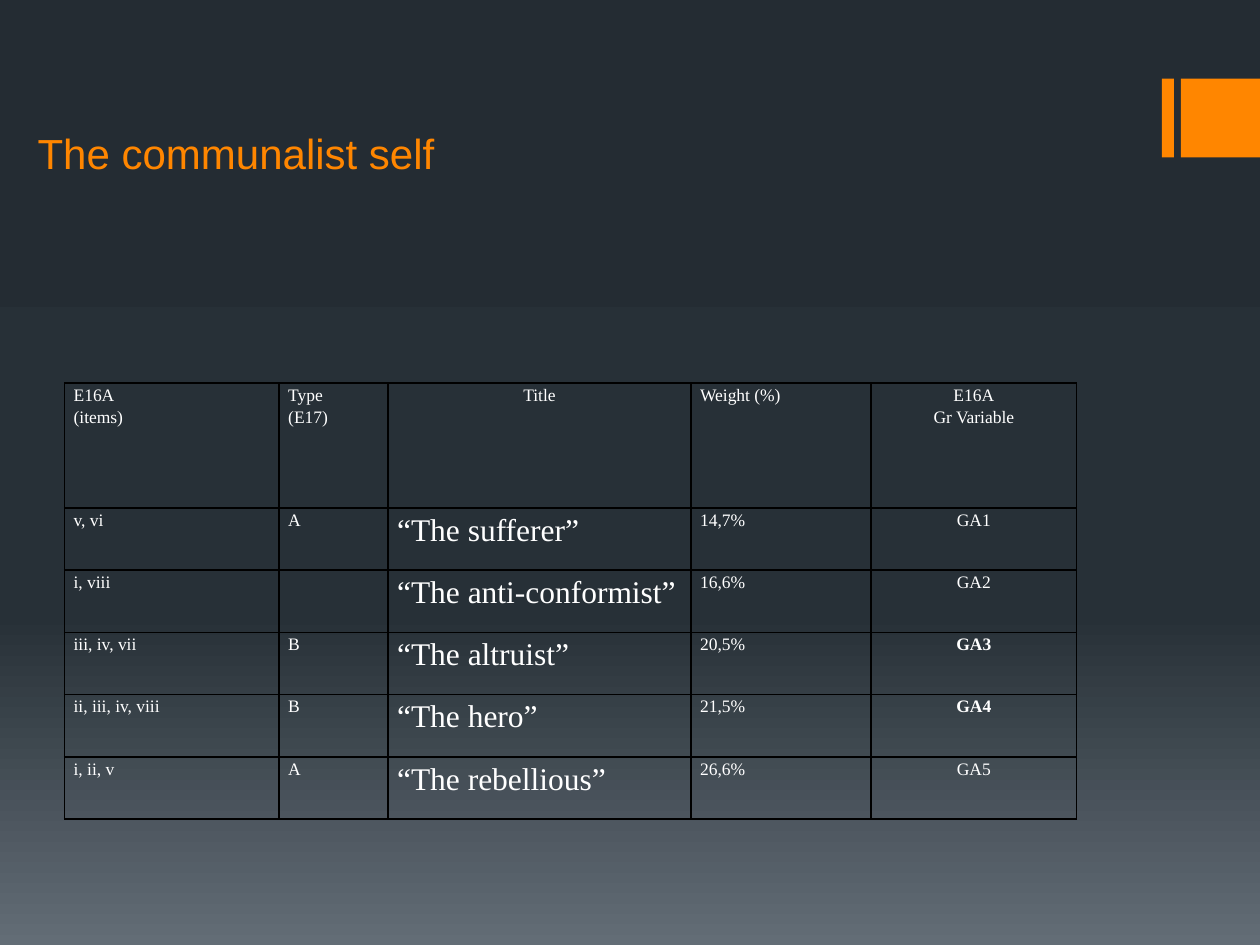
from copy import deepcopy
from typing import NamedTuple

from lxml import etree
from pptx import Presentation
from pptx.dml.color import RGBColor
from pptx.enum import shapes, text
from pptx.oxml import ns
from pptx.util import Pt

ORANGE, WHITE, BLACK = "FF8600", "FFFFFF", "000000"
BACKGROUND = [(0, "242C33"), (0.65, "273037"), (1, "636D76")]
ROW_HEIGHTS = [71.4] + [35.6] * 5
BOLD_VARIABLES = {"GA3", "GA4"}


class Column(NamedTuple):
    width: float
    header_align: text.PP_ALIGN
    body_align: text.PP_ALIGN
    body_size: float = 10


JUSTIFY, CENTER = text.PP_ALIGN.JUSTIFY, text.PP_ALIGN.CENTER
COLUMNS = [
    Column(122.6, JUSTIFY, JUSTIFY),
    Column(62.2, JUSTIFY, JUSTIFY),
    Column(173.2, CENTER, JUSTIFY, 18),
    Column(102.8, JUSTIFY, JUSTIFY),
    Column(117.6, CENTER, CENTER),
]
ROWS = [
    ["E16A\n(items)", "Type\n(E17)", "Title", "Weight (%)", "E16A\nGr Variable"],
    ["v, vi", "A", "“The sufferer”", "14,7%", "GA1"],
    ["i, viii", "", "“The anti-conformist”", "16,6%", "GA2"],
    ["iii, iv, vii", "B", "“The altruist”", "20,5%", "GA3"],
    ["ii, iii, iv, viii", "B", "“The hero”", "21,5%", "GA4"],
    ["i, ii, v", "A", "“The rebellious”", "26,6%", "GA5"],
]


def color(value: str) -> RGBColor:
    return RGBColor.from_string(value)


def style_font(font, name: str, size: float, value: str, bold: bool = False) -> None:
    font.name, font.size, font.bold = name, Pt(size), bold
    font.color.rgb = color(value)


def paint_background(page) -> None:
    fill = page.background.fill
    fill.gradient()
    fill.gradient_angle = 270
    first = page._element.find(".//" + ns.qn("a:gs"))
    first.addnext(deepcopy(first))
    for stop, (position, value) in zip(fill.gradient_stops, BACKGROUND):
        stop.position = position
        stop.color.rgb = color(value)


def add_block(page, left: float, width: float) -> None:
    block = page.shapes.add_shape(
        shapes.MSO_SHAPE.RECTANGLE, Pt(left), Pt(45), Pt(width), Pt(45))
    block.shadow.inherit = False
    block.fill.solid()
    block.fill.fore_color.rgb = color(ORANGE)
    block.line.fill.background()


def add_title(page, words: str) -> None:
    box = page.shapes.add_textbox(Pt(14.4), Pt(31.7), Pt(617.8), Pt(73.4))
    frame = box.text_frame
    frame.word_wrap = True
    frame.vertical_anchor = text.MSO_ANCHOR.BOTTOM
    frame.text = words
    style_font(frame.paragraphs[0].runs[0].font, "Arial", 24, ORANGE)


def add_borders(cell) -> None:
    """Draw a thin black line on all four sides, ahead of the cell's fill."""
    properties = cell._tc.get_or_add_tcPr()
    for index, side in enumerate(("lnL", "lnR", "lnT", "lnB")):
        line = etree.Element(ns.qn(f"a:{side}"), w=str(Pt(1)))
        solid = etree.SubElement(line, ns.qn("a:solidFill"))
        etree.SubElement(solid, ns.qn("a:srgbClr"), val=BLACK)
        properties.insert(index, line)


def fill_cell(cell, words: str, align: text.PP_ALIGN, size: float) -> None:
    cell.margin_left = cell.margin_right = Pt(5.2)
    cell.margin_top = cell.margin_bottom = Pt(0)
    cell.fill.background()
    add_borders(cell)
    cell.text_frame.text = words
    for para in cell.text_frame.paragraphs:
        para.alignment = align
        para.line_spacing = 1.15
        for span in para.runs:
            style_font(span.font, "Times New Roman", size, WHITE, words in BOLD_VARIABLES)


def add_types_table(page) -> None:
    frame = page.shapes.add_table(
        len(ROWS), len(COLUMNS), Pt(36.9), Pt(218.8),
        Pt(sum(column.width for column in COLUMNS)), Pt(sum(ROW_HEIGHTS)))
    table = frame.table
    table.first_row = table.horz_banding = False
    for index, column in enumerate(COLUMNS):
        table.columns[index].width = Pt(column.width)
    for row, (height, values) in enumerate(zip(ROW_HEIGHTS, ROWS)):
        table.rows[row].height = Pt(height)
        for index, (column, words) in enumerate(zip(COLUMNS, values)):
            align = column.body_align if row else column.header_align
            size = column.body_size if row else 10
            fill_cell(table.cell(row, index), words, align, size)


def main() -> None:
    deck = Presentation()
    deck.slide_width, deck.slide_height = Pt(720), Pt(540)
    page = deck.slides.add_slide(deck.slide_layouts[6])
    paint_background(page)
    add_block(page, 664, 6.8)
    add_block(page, 674.8, 45.2)
    add_title(page, "The communalist self")
    add_types_table(page)
    deck.save("out.pptx")


if __name__ == "__main__":
    main()
